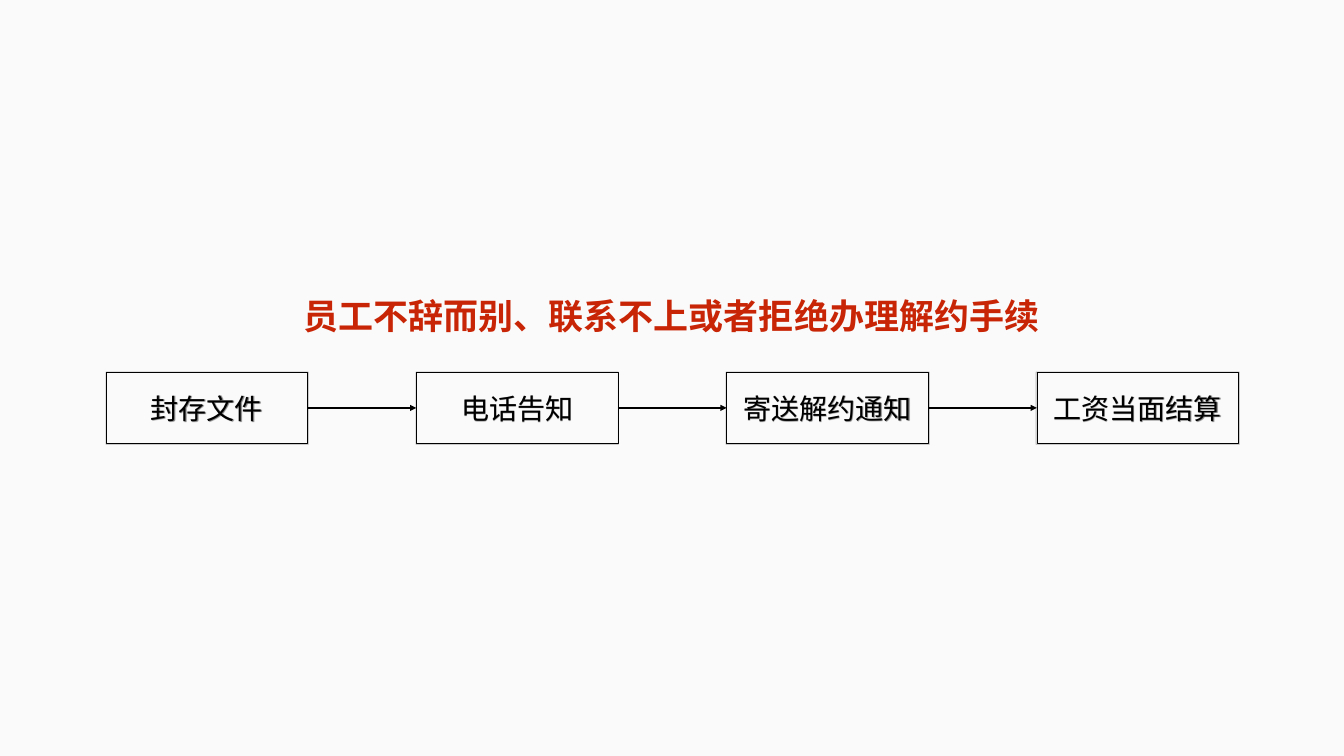
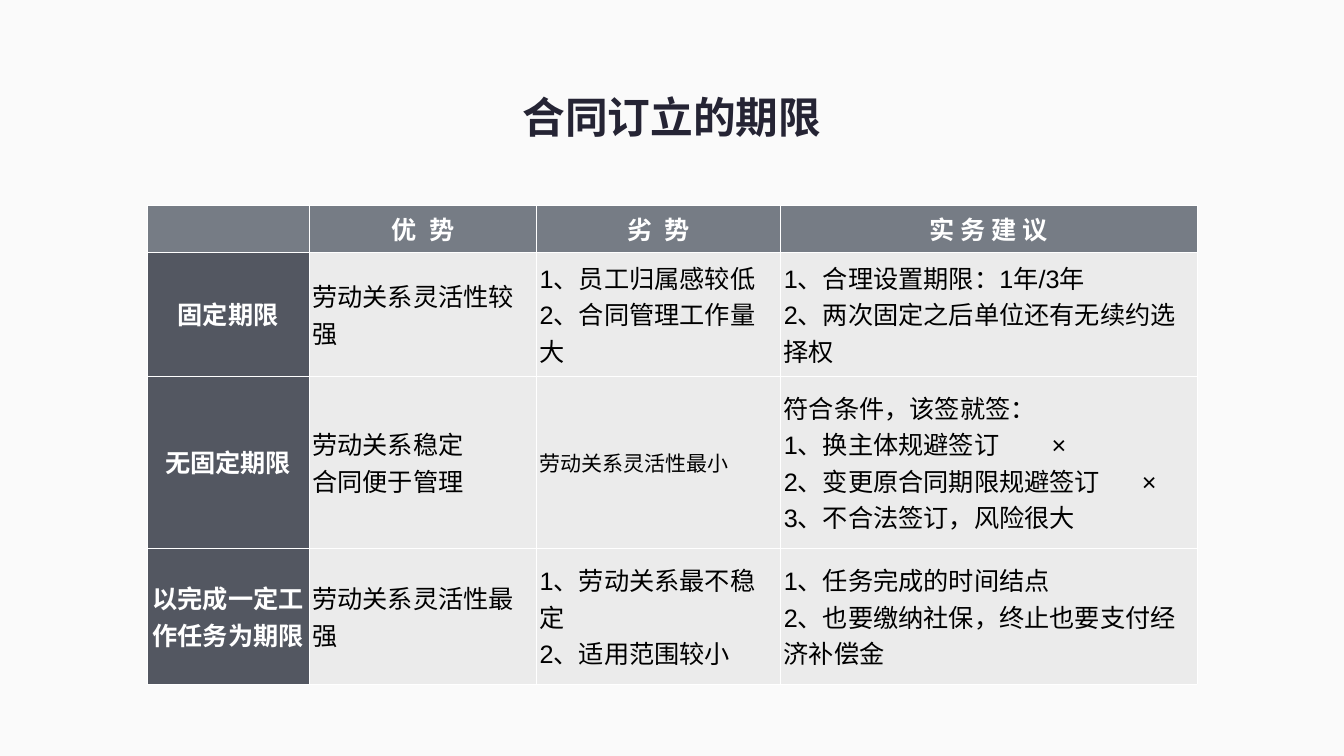
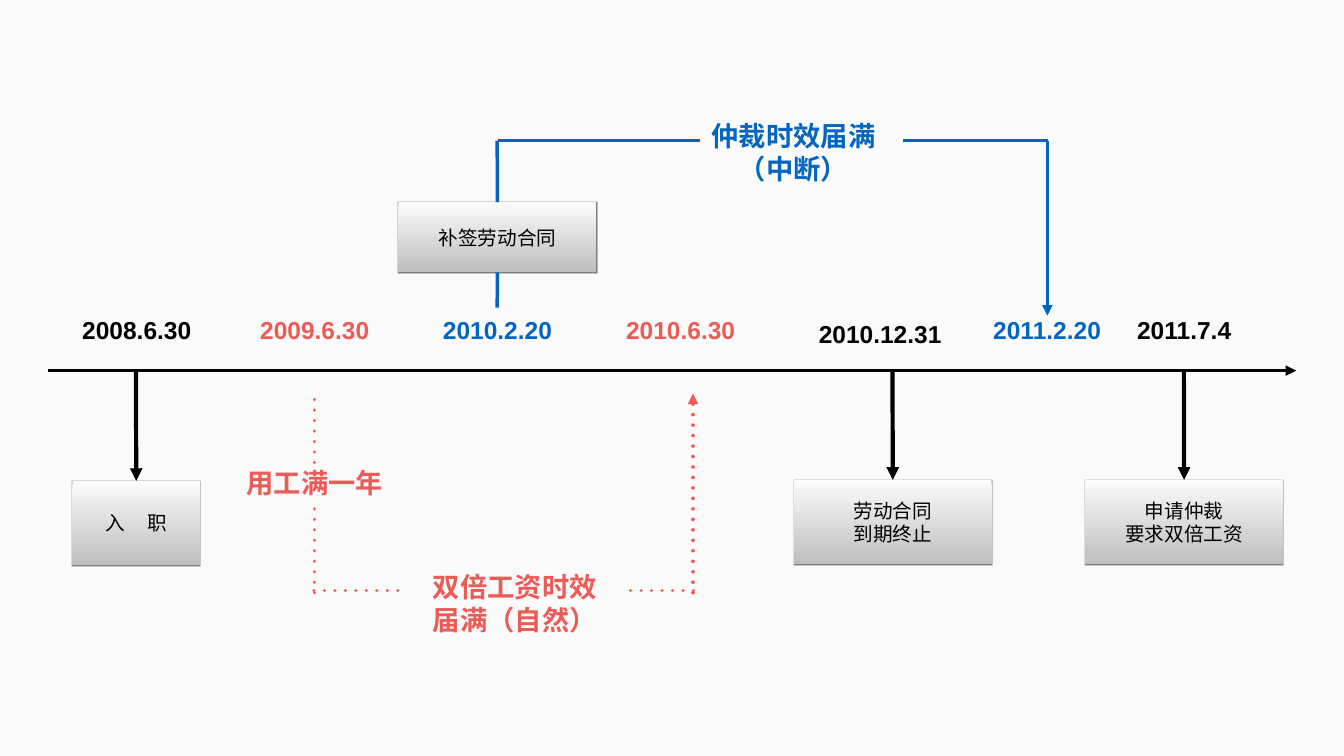
from dataclasses import dataclass
from itertools import pairwise

from lxml.etree import SubElement
from pptx import Presentation
from pptx.dml.color import RGBColor
from pptx.enum.shapes import MSO_CONNECTOR, MSO_SHAPE
from pptx.enum.text import MSO_ANCHOR, MSO_AUTO_SIZE, PP_ALIGN
from pptx.oxml.ns import qn
from pptx.shapes.autoshape import Shape
from pptx.shapes.connector import Connector
from pptx.slide import Slide
from pptx.text.text import TextFrame
from pptx.util import Emu, Pt

PX = 9525
SLIDE_W, SLIDE_H = 2560, 1440
INSET = 4
PAPER, BLACK, WHITE = "FAFAFA", "000000", "FFFFFF"
RED, CORAL, BLUE, INK = "C82506", "EC5C57", "0365C0", "252434"
HEAD_FILL, SIDE_FILL, BODY_FILL = "767C85", "535761", "EBEBEB"
ARIAL, CJK = "Arial", "Noto Sans CJK SC"
TOP, LEFT, BOTTOM, RIGHT = range(4)


@dataclass(frozen=True)
class Label:
    text: str
    x: int
    y: int
    w: int
    h: int
    color: str = BLACK


@dataclass(frozen=True)
class Segment:
    x1: int
    y1: int
    x2: int
    y2: int
    color: str
    arrow: bool = False
    dotted: bool = False


def px(n: int) -> Emu:
    return Emu(n * PX)


def rgb(color: str) -> RGBColor:
    return RGBColor.from_string(color)


def write(tf: TextFrame, text: str, *, size: int, color: str = BLACK,
          bold: bool = False, align: PP_ALIGN | None = PP_ALIGN.CENTER,
          font: str = ARIAL, east_asian: str = ARIAL, tracking: int = 0,
          spacing: float | None = None, hanging: int = 0,
          tabs: tuple[int, ...] = ()) -> None:
    """Fill a frame: \\n starts a paragraph, \\v breaks a line."""
    for i, paragraph in enumerate(text.split("\n")):
        p = tf.add_paragraph() if i else tf.paragraphs[0]
        p.alignment = align
        if spacing:
            p.line_spacing = spacing
        pPr = p._p.get_or_add_pPr()
        if hanging:
            pPr.set("marL", str(px(hanging)))
            pPr.set("indent", str(px(-hanging)))
        if tabs:
            tab_list = SubElement(pPr, qn("a:tabLst"))
            for stop in tabs:
                SubElement(tab_list, qn("a:tab"), pos=str(px(stop)), algn="l")
        for j, line in enumerate(paragraph.split("\v")):
            if j:
                p.add_line_break()
            r = p.add_run()
            r.text = line
            r.font.size = Pt(size)
            r.font.bold = bold
            r.font.name = font
            r.font.color.rgb = rgb(color)
            rPr = r._r.get_or_add_rPr()
            SubElement(rPr, qn("a:ea"), typeface=east_asian)
            if tracking:
                rPr.set("spc", str(tracking * 100))


def set_frame(tf: TextFrame, *, inset: int = INSET, wrap: bool = True,
              anchor: MSO_ANCHOR = MSO_ANCHOR.MIDDLE) -> None:
    tf.margin_left = tf.margin_right = tf.margin_top = tf.margin_bottom = px(inset)
    tf.vertical_anchor = anchor
    tf.word_wrap = wrap
    tf.auto_size = MSO_AUTO_SIZE.NONE if wrap else MSO_AUTO_SIZE.SHAPE_TO_FIT_TEXT


def add_label(s: Slide, label: Label, *, inset: int = INSET, wrap: bool = True,
              anchor: MSO_ANCHOR = MSO_ANCHOR.MIDDLE, **fmt) -> None:
    sp = s.shapes.add_textbox(px(label.x), px(label.y), px(label.w), px(label.h))
    set_frame(sp.text_frame, inset=inset, wrap=wrap, anchor=anchor)
    write(sp.text_frame, label.text, color=label.color, **fmt)


def add_box(s: Slide, label: Label, *, gradient: bool, **fmt) -> Shape:
    """Add a softly shadowed rectangle, either outlined or grey gradient."""
    sp = s.shapes.add_shape(MSO_SHAPE.RECTANGLE, px(label.x), px(label.y),
                            px(label.w), px(label.h))
    if gradient:
        sp.fill.gradient()
        sp.fill.gradient_angle = 270
        for stop, color in zip(sp.fill.gradient_stops, ("FBFBFB", "BEBEBE")):
            stop.color.rgb = rgb(color)
        sp.line.fill.background()
    else:
        sp.fill.background()
        sp.line.color.rgb = rgb(BLACK)
        sp.line.width = Pt(0.75)
    sp.shadow.inherit = False
    effects = sp._element.spPr.find(qn("a:effectLst"))
    shadow = SubElement(effects, qn("a:outerShdw"), blurRad=str(Pt(1)),
                        dist="0", dir="5400000", rotWithShape="0")
    shade = SubElement(shadow, qn("a:srgbClr"), val=BLACK)
    SubElement(shade, qn("a:alpha"), val="50000")
    set_frame(sp.text_frame)
    write(sp.text_frame, label.text, color=label.color, **fmt)
    return sp


def add_line(s: Slide, seg: Segment, width: int) -> Connector:
    cxn = s.shapes.add_connector(MSO_CONNECTOR.STRAIGHT, px(seg.x1), px(seg.y1),
                                 px(seg.x2), px(seg.y2))
    cxn.line.color.rgb = rgb(seg.color)
    cxn.line.width = Pt(width)
    ln = cxn.line._get_or_add_ln()
    if seg.dotted:
        ln.set("cap", "rnd")
        dash = SubElement(ln, qn("a:custDash"))
        SubElement(dash, qn("a:ds"), d="100000", sp="200000")
    if seg.arrow:
        SubElement(ln, qn("a:tailEnd"), type="triangle")
    SubElement(cxn._element.spPr, qn("a:effectLst"))
    return cxn


def build_steps(s: Slide) -> None:
    x, y, w, h, step = 202, 709, 384, 136, 591
    names = ("封存文件", "电话告知", "寄送解约通知", "工资当面结算")
    add_label(s, Label("员工不辞而别、联系不上或者拒绝办理解约手续", 575, 510, 1410, 102, RED),
              wrap=False, size=50, bold=True, align=None, spacing=2.0, hanging=36)
    boxes = [add_box(s, Label(name, x + i * step, y, w, h), gradient=False, size=40)
             for i, name in enumerate(names)]
    mid = y + h // 2
    for i, (before, after) in enumerate(pairwise(boxes)):
        start = x + i * step + w
        cxn = add_line(s, Segment(start, mid, start + step - w, mid, BLACK, arrow=True), 3)
        cxn.begin_connect(before, RIGHT)
        cxn.end_connect(after, LEFT)


TERMS = (
    ("", "优 势", "劣 势", "实 务 建 议"),
    ("固定期限", "劳动关系灵活性较强", "1、员工归属感较低\v2、合同管理工作量大",
     "1、合理设置期限：1年/3年\v2、两次固定之后单位还有无续约选择权"),
    ("无固定期限", "劳动关系稳定\v合同便于管理", "劳动关系灵活性最小",
     "符合条件，该签就签：\v1、换主体规避签订\t×\v2、变更原合同期限规避签订\t×\v"
     "3、不合法签订，风险很大"),
    ("以完成一定工作任务为期限", "劳动关系灵活性最强",
     "1、劳动关系最不稳定\v2、适用范围较小",
     "1、任务完成的时间结点\v2、也要缴纳社保，终止也要支付经济补偿金"),
)


def build_terms(s: Slide) -> None:
    widths, heights = (309, 433, 465, 793), (89, 236, 328, 259)
    small_cell, spaced_heads, marks_cell = (2, 2), ((0, 1), (0, 2)), (2, 3)
    frame = s.shapes.add_table(len(heights), len(widths), px(280), px(391),
                               px(sum(widths)), px(sum(heights)))
    table = frame.table
    table.horz_banding = table.first_row = False
    for col, w in zip(table.columns, widths):
        col.width = px(w)
    for row, h in zip(table.rows, heights):
        row.height = px(h)
    for i, texts in enumerate(TERMS):
        for j, text in enumerate(texts):
            cell = table.cell(i, j)
            tcPr = cell._tc.get_or_add_tcPr()
            for side in ("lnL", "lnR", "lnT", "lnB"):
                ln = SubElement(tcPr, qn(f"a:{side}"), w=str(Pt(1)))
                SubElement(SubElement(ln, qn("a:solidFill")), qn("a:srgbClr"), val=WHITE)
            cell.fill.solid()
            cell.fill.fore_color.rgb = rgb(
                HEAD_FILL if i == 0 else SIDE_FILL if j == 0 else BODY_FILL)
            cell.margin_left = cell.margin_right = px(6)
            cell.margin_top = cell.margin_bottom = px(6)
            cell.vertical_anchor = MSO_ANCHOR.MIDDLE
            heading = i == 0 or j == 0
            if text:
                write(cell.text_frame, text, size=30 if (i, j) == small_cell else 36,
                      color=WHITE if heading else BLACK, bold=heading,
                      align=PP_ALIGN.CENTER if heading else PP_ALIGN.LEFT,
                      east_asian=CJK, tracking=5 if (i, j) in spaced_heads else 0,
                      tabs=(510, 682) if (i, j) == marks_cell else ())
    add_label(s, Label("合同订立的期限", 985, 162, 589, 133, INK), inset=10, wrap=False,
              anchor=MSO_ANCHOR.TOP, size=61, bold=True, font=CJK, east_asian=CJK)


AXIS_Y, BLUE_Y, CORAL_Y = 706, 268, 1125
DATES = (
    Label("2008.6.30", 152, 596, 217, 64),
    Label("2009.6.30", 491, 596, 217, 64, CORAL),
    Label("2010.2.20", 839, 596, 217, 64, BLUE),
    Label("2010.6.30", 1188, 596, 217, 64, CORAL),
    Label("2010.12.31", 1555, 604, 243, 64),
    Label("2011.2.20", 1887, 596, 215, 64, BLUE),
    Label("2011.7.4", 2161, 596, 189, 64),
)
LIMITS = (
    Label("用工满一年", 411, 852, 377, 134, CORAL),
    Label("双倍工资时效届满（自然）", 797, 1058, 367, 181, CORAL),
    Label("仲裁时效届满（中断）", 1339, 201, 345, 176, BLUE),
)
EVENTS = (
    Label("入 职", 138, 916, 243, 161),
    Label("劳动合同\n到期终止", 1512, 914, 377, 161),
    Label("申请仲裁\n要求双倍工资", 2067, 914, 377, 161),
)
RENEWAL = Label("补签劳动合同", 759, 385, 377, 134)
PATHS = (
    Segment(599, 1129, 599, 967, CORAL, dotted=True),
    Segment(598, CORAL_Y, 776, CORAL_Y, CORAL, dotted=True),
    Segment(1320, 1129, 1320, 750, CORAL, arrow=True, dotted=True),
    Segment(1321, CORAL_Y, 1194, CORAL_Y, CORAL, dotted=True),
    Segment(599, 881, 599, 747, CORAL, dotted=True),
    Segment(948, BLUE_Y, 1334, BLUE_Y, BLUE),
    Segment(1996, BLUE_Y, 1720, BLUE_Y, BLUE),
    Segment(1995, BLUE_Y, 1995, 601, BLUE, arrow=True),
    Segment(91, AXIS_Y, 2469, AXIS_Y, BLACK, arrow=True),
)


def build_timeline(s: Slide) -> None:
    for date in DATES:
        add_label(s, date, wrap=False, size=35, bold=True)
    for limit in LIMITS:
        add_label(s, limit, size=39, bold=True)
    for seg in PATHS:
        add_line(s, seg, 5)

    box = add_box(s, RENEWAL, gradient=True, size=28)
    x, bottom = RENEWAL.x + RENEWAL.w // 2, RENEWAL.y + RENEWAL.h
    for side, start, end in ((TOP, RENEWAL.y, BLUE_Y), (BOTTOM, bottom, 586)):
        add_line(s, Segment(x, start, x, end, BLUE), 5).begin_connect(box, side)

    for event in EVENTS:
        box = add_box(s, event, gradient=True, size=28,
                      tracking=12 if " " in event.text else 0)
        x = event.x + event.w // 2
        drop = add_line(s, Segment(x, AXIS_Y, x, event.y, BLACK, arrow=True), 6)
        drop.end_connect(box, TOP)


def main() -> None:
    prs = Presentation()
    prs.slide_width, prs.slide_height = px(SLIDE_W), px(SLIDE_H)
    background = prs.slide_master.background.fill
    background.solid()
    background.fore_color.rgb = rgb(PAPER)
    for build in (build_steps, build_terms, build_timeline):
        build(prs.slides.add_slide(prs.slide_layouts[6]))
    prs.save("out.pptx")


if __name__ == "__main__":
    main()
